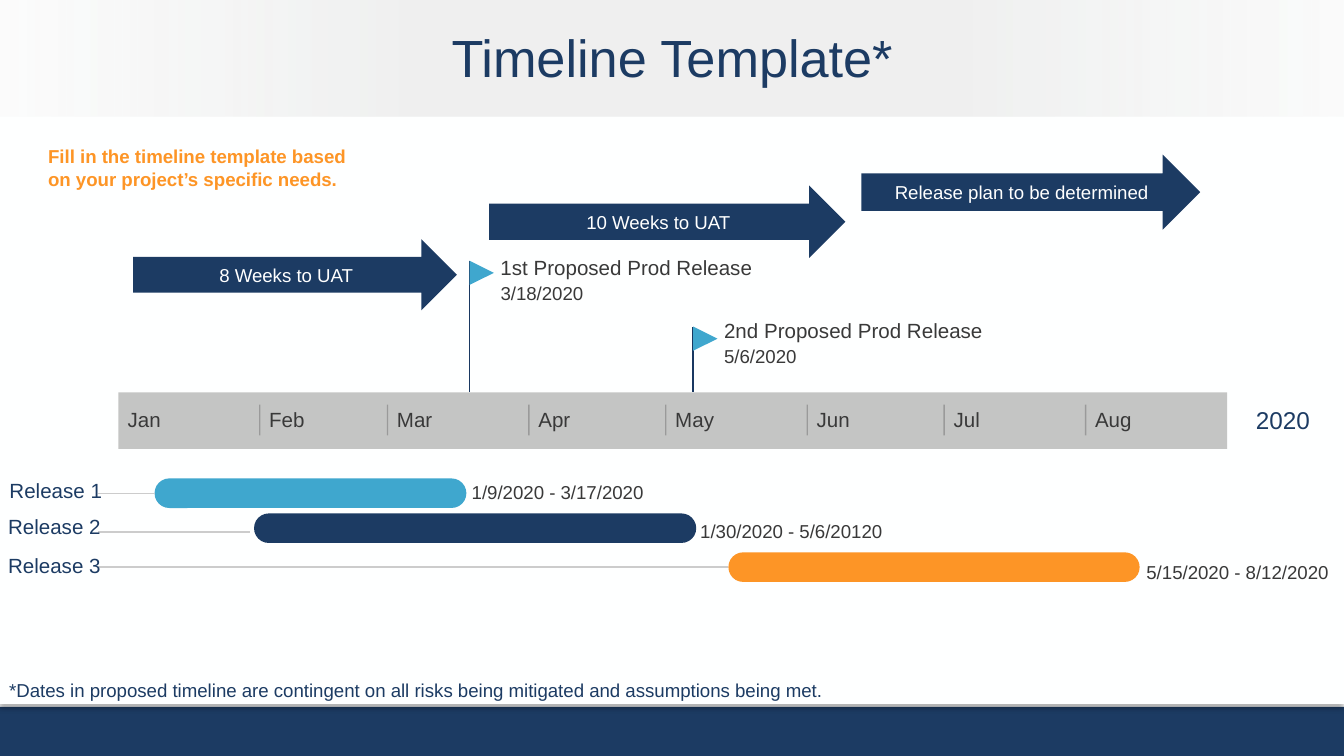
from lxml import etree
from pptx import Presentation
from pptx import util as u
from pptx.dml.color import RGBColor
from pptx.enum import shapes, text
from pptx.oxml.ns import qn

NAVY = RGBColor(0x1C, 0x3B, 0x63)
POLE = RGBColor(0x19, 0x38, 0x61)
BLUE = RGBColor(0x3F, 0xA7, 0xCE)
ORANGE = RGBColor(0xFD, 0x95, 0x26)
GREY = RGBColor(0xC4, 0xC5, 0xC4)
RULE = RGBColor(0xCC, 0xCC, 0xCC)
DARK = RGBColor(0x39, 0x39, 0x39)
PAPER = RGBColor(0xFE, 0xFF, 0xFF)
WHITE = RGBColor(0xFF, 0xFF, 0xFF)

W = 10
H = W * 9 / 16
AXIS_LEFT, AXIS_TOP, AXIS_W, AXIS_H = 0.88, 2.92, 8.25, 0.42
BAR_H = 0.22
MONTHS = {"Jan": 31, "Feb": 28, "Mar": 31, "Apr": 30,
          "May": 31, "Jun": 30, "Jul": 31, "Aug": 31}
DAY_W = AXIS_W / sum(MONTHS.values())

ARROWS = [("8 Weeks to UAT", (0.99, 1.78, 2.41, 0.53)),
          ("10 Weeks to UAT", (3.64, 1.38, 2.65, 0.54)),
          ("Release plan to be determined", (6.41, 1.15, 2.52, 0.56))]
# name, date, day of the year, top of flag, top of name
FLAGS = [("1st Proposed Prod Release", "3/18/2020", 77, 1.94, 1.89),
         ("2nd Proposed Prod Release", "5/6/2020", 126, 2.43, 2.36)]
# name, name position, dates, dates position, bar left, top, width, colour
RELEASES = [
    ("Release 1", (0.07, 3.55), "1/9/2020 - 3/17/2020", (3.51, 3.58), 1.15, 3.56, 2.32, BLUE),
    ("Release 2", (0.06, 3.82), "1/30/2020 - 5/6/20120", (5.21, 3.87), 1.89, 3.82, 3.29, NAVY),
    ("Release 3", (0.06, 4.11), "5/15/2020 - 8/12/2020", (8.53, 4.17), 5.42, 4.11, 3.06, ORANGE)]


def inches(*values):
    return [u.Inches(v) for v in values]


def add_xml(parent, tag, **attrs):
    return etree.SubElement(parent, qn(tag), {k: str(v) for k, v in attrs.items()})


def write(sp, words, size, color, align=text.PP_ALIGN.LEFT,
          anchor=text.MSO_ANCHOR.MIDDLE, inset=(0, 0), bold=False):
    tf = sp.text_frame
    x, y = inches(*inset)
    frame = dict(word_wrap=True, auto_size=text.MSO_AUTO_SIZE.NONE, vertical_anchor=anchor,
                 margin_left=x, margin_right=x, margin_top=y, margin_bottom=y)
    for name, value in frame.items():
        setattr(tf, name, value)
    p = tf.paragraphs[0]
    p.alignment = align
    r = p.add_run()
    r.text = words
    for name, value in dict(size=u.Pt(size), name="Arial", bold=bold).items():
        setattr(r.font, name, value)
    r.font.color.rgb = color


def add_label(s, box, words, size, color, **fmt):
    write(s.shapes.add_textbox(*inches(*box)), words, size, color, **fmt)


def add_block(s, kind, box, color):
    sp = s.shapes.add_shape(kind, *inches(*box))
    sp.shadow.inherit = False
    sp.fill.solid()
    sp.fill.fore_color.rgb = color
    sp.line.fill.background()
    return sp


def add_line(s, x1, y1, x2, y2, color, alpha=None):
    line = s.shapes.add_connector(shapes.MSO_CONNECTOR.STRAIGHT, *inches(x1, y1, x2, y2))
    line.line.color.rgb = color
    line.line.width = u.Pt(0.75)
    if alpha:
        clr = line._element.spPr.find(".//" + qn("a:srgbClr"))
        add_xml(clr, "a:alpha", val=alpha * 1000)
    add_xml(line._element.spPr, "a:effectLst")
    return line


def add_backdrop(s):
    """Footer bar, white page with a soft shadow, and the faded title band."""
    rect = shapes.MSO_SHAPE.RECTANGLE
    add_block(s, rect, (0, 5.26, W, H - 5.26), NAVY)

    page = add_block(s, rect, (0, 0, W, 5.24), PAPER)
    effects = page._element.spPr.find(qn("a:effectLst"))
    shadow = add_xml(effects, "a:outerShdw", blurRad=u.Pt(3.1), dist=u.Pt(1.8),
                     dir=90 * 60000, rotWithShape=0)
    add_xml(add_xml(shadow, "a:srgbClr", val="000000"), "a:alpha", val=35000)

    band = add_block(s, rect, (0, 0, W, 0.87), GREY)
    band.fill.gradient()
    band.fill.gradient_angle = 180
    stops = band._element.spPr.find(".//" + qn("a:gsLst"))
    for stop in list(stops):
        stops.remove(stop)
    for pos, alpha in ((0, 6), (29, 25), (69, 25), (99, 5)):
        stop = add_xml(stops, "a:gs", pos=pos * 1000)
        add_xml(add_xml(stop, "a:srgbClr", val=GREY), "a:alpha", val=alpha * 1000)


def add_title(s):
    title = s.shapes.title
    for name, value in zip(("left", "top", "width", "height"), inches(0, 0.16, W, 0.52)):
        setattr(title, name, value)
    write(title, "Timeline Template*", 28, NAVY, align=text.PP_ALIGN.CENTER, inset=(0.1, 0.05))
    s.shapes._spTree.append(title._element)  # bring above the backdrop


def add_axis(s):
    add_block(s, shapes.MSO_SHAPE.RECTANGLE, (AXIS_LEFT, AXIS_TOP, AXIS_W, AXIS_H), GREY)
    x = AXIS_LEFT
    for month, days in MONTHS.items():
        if x > AXIS_LEFT:
            add_line(s, x, 3.01, x, 3.24, DARK, alpha=29)
        add_label(s, (x + 0.07, 3.03, 0.42, 0.18), month, 11, DARK)
        x += days * DAY_W
    add_label(s, (9.29, 3.01, 0.51, 0.22), "2020", 13, NAVY, align=text.PP_ALIGN.CENTER)


def add_flag(s, name, date, day, top, name_top):
    x = AXIS_LEFT + day * DAY_W
    add_line(s, x, top, x, AXIS_TOP, POLE)
    flag = add_block(s, shapes.MSO_SHAPE.FLOWCHART_MERGE, (x, top, 0.18, 0.18), BLUE)
    flag.rotation = 270
    add_label(s, (x + 0.23, name_top, 2.26, 0.19), name, 11, DARK)
    add_label(s, (x + 0.23, name_top + 0.2, 0.81, 0.18), date, 10, DARK)


def add_release(s, name, name_at, dates, dates_at, left, top, width, color):
    bar = add_block(s, shapes.MSO_SHAPE.ROUNDED_RECTANGLE, (left, top, width, BAR_H), color)
    bar.adjustments[0] = 0.5
    if name == "Release 2":  # this leader stops short of its bar
        add_line(s, 0.73, 3.96, 1.86, 3.96, RULE)
    else:
        y = top + BAR_H / 2
        add_line(s, 0.73, y, left, y, RULE).end_connect(bar, 1)
    add_label(s, (*name_at, 1.08, 0.19), name, 11, NAVY)
    add_label(s, (*dates_at, 1.78, 0.17), dates, 10, DARK)


def add_arrow(s, words, box):
    arrow = add_block(s, shapes.MSO_SHAPE.RIGHT_ARROW, box, NAVY)
    write(arrow, words, 10, WHITE, align=text.PP_ALIGN.CENTER, inset=(0.1, 0.05))


def main():
    prs = Presentation()
    prs.slide_width, prs.slide_height = inches(W, H)
    s = prs.slides.add_slide(prs.slide_layouts[5])
    s.background.fill.solid()
    s.background.fill.fore_color.rgb = PAPER
    add_backdrop(s)
    add_title(s)
    add_axis(s)
    for flag in FLAGS:
        add_flag(s, *flag)
    for release in RELEASES:
        add_release(s, *release)
    for arrow in ARROWS:
        add_arrow(s, *arrow)
    note = dict(anchor=text.MSO_ANCHOR.TOP, inset=(0.1, 0.1))
    add_label(s, (0.26, 0.98, 2.52, 0.63),
              "Fill in the timeline template based on your project’s specific needs.",
              10, ORANGE, bold=True, **note)
    add_label(s, (-0.03, 4.95, 8.91, 0.38),
              "*Dates in proposed timeline are contingent on all risks being mitigated "
              "and assumptions being met.", 10, NAVY, **note)
    prs.save("out.pptx")


if __name__ == "__main__":
    main()
